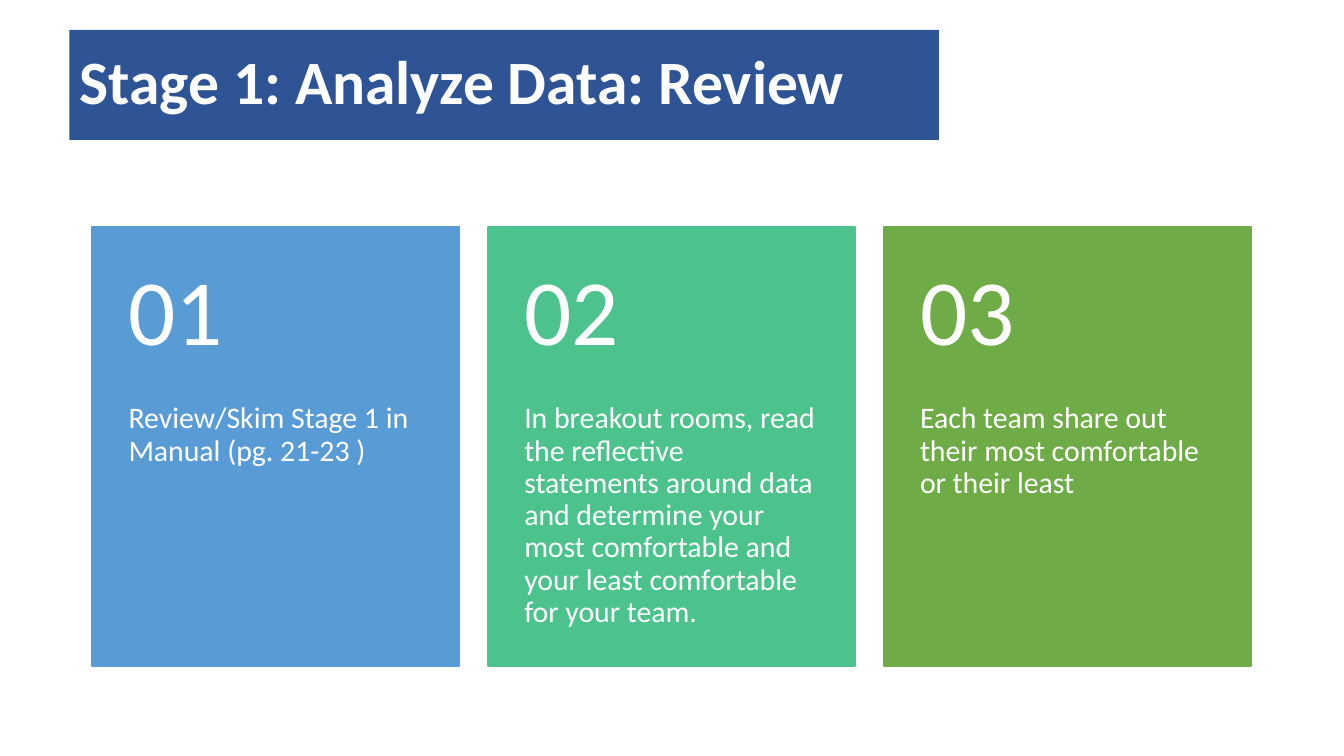
from pptx import Presentation
from pptx.dml.color import RGBColor
from pptx.enum.shapes import MSO_SHAPE
from pptx.enum.text import MSO_ANCHOR, PP_ALIGN
from pptx.util import Pt

RECT = MSO_SHAPE.RECTANGLE
TOP, MIDDLE = MSO_ANCHOR.TOP, MSO_ANCHOR.MIDDLE
LEFT = PP_ALIGN.LEFT

COLORS = {
    "title": "2F5496",
    "text": "FFFFFF",
    "blue": "599BD5",
    "teal": "4CC38C",
    "green": "6FAB46",
}

STEPS = [
    ("blue", "Review/Skim Stage 1 in Manual (pg. 21-23 )"),
    ("teal", "In breakout rooms, read the reflective statements around data and "
             "determine your most comfortable and your least comfortable for your team."),
    ("green", "Each team share out their most comfortable or their least"),
]

CARD_LEFT, CARD_TOP, CARD_STEP = 49.5, 121.7, 212
CARD_WIDTH, CARD_HEIGHT, NUMBER_HEIGHT = 196.6, 235.4, 94.3
PAD = 19.4


class Deck:
    font = "Calibri"
    line_spacing = 0.9

    def __init__(self, slide):
        self.slide = slide

    def color(self, name):
        return RGBColor.from_string(COLORS[name])

    def box(self, x, y, w, h, fill, outlined=True):
        s = self.slide.shapes.add_shape(RECT, Pt(x), Pt(y), Pt(w), Pt(h))
        s.shadow.inherit = False
        s.fill.solid()
        s.fill.fore_color.rgb = self.color(fill)
        if outlined:
            s.line.color.rgb = self.color(fill)
            s.line.width = Pt(1)
        else:
            s.line.fill.background()
        return s

    def label(self, x, y, w, h, text, size, insets, anchor=TOP):
        s = self.slide.shapes.add_textbox(Pt(x), Pt(y), Pt(w), Pt(h))
        self.put_text(s, text, size, insets, anchor)

    def put_text(self, s, text, size, insets, anchor, bold=False):
        """Fill a shape with one paragraph; insets are left, top, right, bottom."""
        tf = s.text_frame
        left, top, right, bottom = map(Pt, insets)
        frame_format = {
            "word_wrap": True, "vertical_anchor": anchor,
            "margin_left": left, "margin_top": top,
            "margin_right": right, "margin_bottom": bottom,
        }
        for name, value in frame_format.items():
            setattr(tf, name, value)
        p = tf.paragraphs[0]
        p.alignment = LEFT
        p.line_spacing = self.line_spacing
        r = p.add_run()
        r.text = text
        for name, value in {"name": self.font, "size": Pt(size), "bold": bold}.items():
            setattr(r.font, name, value)
        r.font.color.rgb = self.color("text")

    def title(self, x, y, w, h, text):
        s = self.box(x, y, w, h, "title", outlined=False)
        self.put_text(s, text, 33, (5.4, 2.7, 5.4, 2.7), MIDDLE, bold=True)

    def card(self, x, y, number, fill, text):
        self.box(x, y, CARD_WIDTH, CARD_HEIGHT, fill)
        self.label(x, y + NUMBER_HEIGHT, CARD_WIDTH, CARD_HEIGHT - NUMBER_HEIGHT,
                   text, 16, (PAD, 0, PAD, PAD))
        self.label(x, y, CARD_WIDTH, NUMBER_HEIGHT,
                   f"{number:02}", 50, (PAD, 10, PAD, 10), MIDDLE)


def main():
    prs = Presentation()
    prs.slide_width, prs.slide_height = Pt(720), Pt(405)
    deck = Deck(prs.slides.add_slide(prs.slide_layouts[6]))
    deck.title(37.2, 16, 465.8, 59, "Stage 1: Analyze Data: Review")
    for i, (fill, text) in enumerate(STEPS):
        deck.card(CARD_LEFT + i * CARD_STEP, CARD_TOP, i + 1, fill, text)
    prs.save("out.pptx")


if __name__ == "__main__":
    main()
